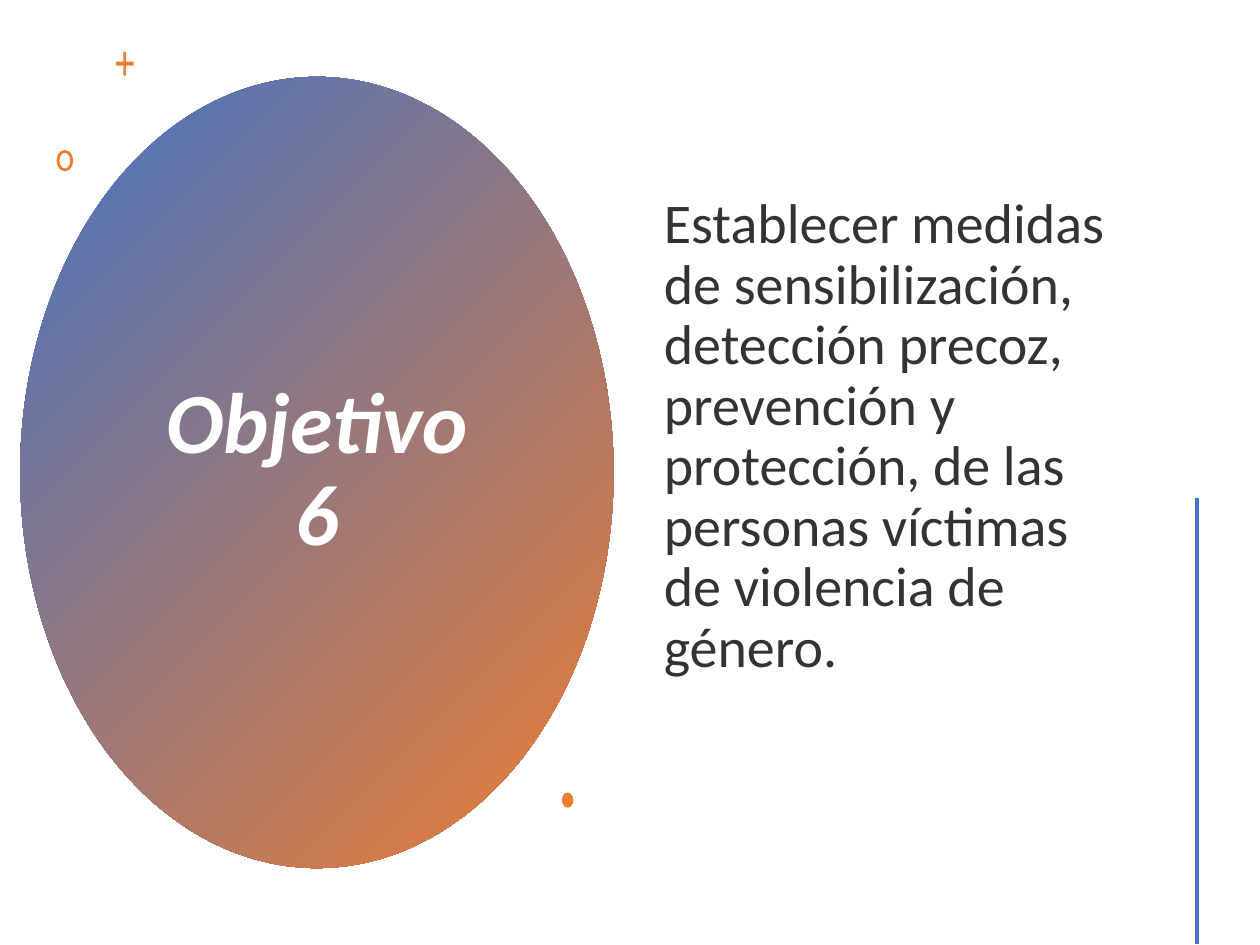
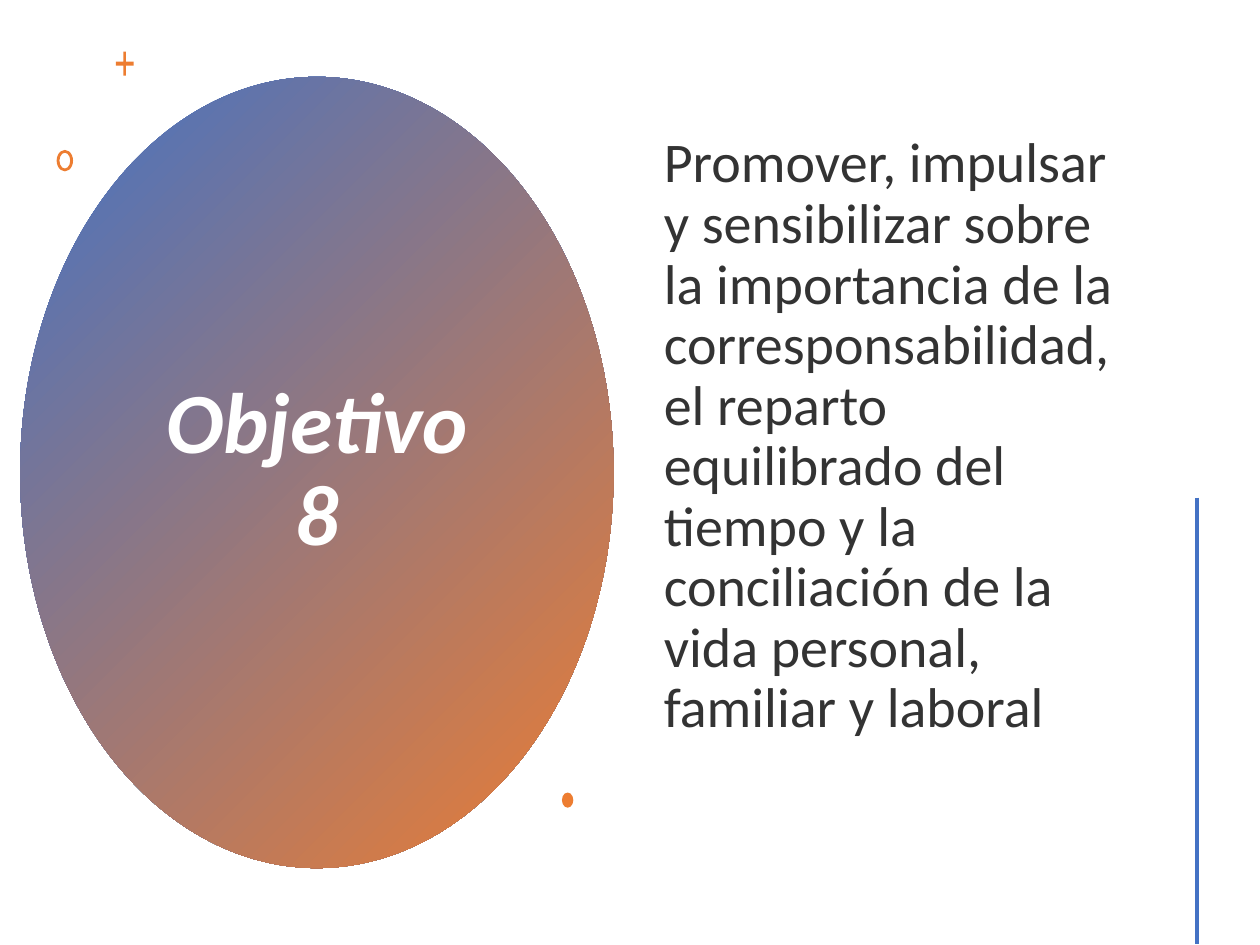
import pptx
import pptx.util
import pptx.dml.color
import pptx.enum.shapes
import pptx.enum.text
import pptx.oxml.ns
import lxml.etree

Inches = pptx.util.Inches
SHAPE = pptx.enum.shapes.MSO_SHAPE
ALIGN = pptx.enum.text.PP_ALIGN
COLORS = {"blue": "4472C4", "orange": "ED7D31", "white": "FFFFFF", "text": "333333"}
FONT = "Calibri"
OBJECTIVES = [
    ("Objetivo 6", "Establecer medidas de sensibilización, detección precoz, prevención y "
     "protección, de las personas víctimas de violencia de género."),
    ("Objetivo 8", "Promover, impulsar y sensibilizar sobre la importancia de la "
     "corresponsabilidad, el reparto equilibrado del tiempo y la conciliación de la "
     "vida personal, familiar y laboral"),
]


def rgb(name):
    """Return the named palette colour."""
    return pptx.dml.color.RGBColor.from_string(COLORS[name])


def add_text(s, text, box, size, color, align=ALIGN.LEFT, bold=False, italic=False,
             before=0, bottom=0.05):
    """Add a vertically centred text box."""
    tf = s.shapes.add_textbox(*map(Inches, box)).text_frame
    tf.word_wrap = True
    tf.vertical_anchor = pptx.enum.text.MSO_ANCHOR.MIDDLE
    tf.margin_bottom = Inches(bottom)
    p = tf.paragraphs[0]
    p.alignment, p.line_spacing = align, 0.9
    p.space_before = pptx.util.Pt(before)
    r = p.add_run()
    r.text = text
    r.font.name, r.font.size = FONT, pptx.util.Pt(size)
    r.font.bold, r.font.italic = bold, italic
    r.font.color.rgb = rgb(color)


def paint(sp, color):
    """Give a shape a plain fill without outline or shadow."""
    sp.shadow.inherit = False
    sp.fill.solid()
    sp.fill.fore_color.rgb = rgb(color)
    sp.line.fill.background()


def add_plus(s, box):
    """Draw a thin plus sign that fills the box."""
    left, top, width, height = box
    x0, x1, x2, x3 = (left + width * f for f in (0, 0.43, 0.57, 1))
    y0, y1, y2, y3 = (top + height * f for f in (0, 0.42, 0.58, 1))
    outline = [(x1, y0), (x2, y0), (x2, y1), (x3, y1), (x3, y2), (x2, y2),
               (x2, y3), (x1, y3), (x1, y2), (x0, y2), (x0, y1), (x1, y1)]
    points = [(Inches(x), Inches(y)) for x, y in outline]
    builder = s.shapes.build_freeform(*points[0])
    builder.add_line_segments(points[1:], close=True)
    paint(builder.convert_to_shape(), "orange")


def add_title_oval(s, title, box):
    """Draw the gradient oval with its title and the small ornaments around it."""
    left, top, width, height = box
    oval = s.shapes.add_shape(SHAPE.OVAL, *map(Inches, box))
    oval.shadow.inherit = False
    oval.line.fill.background()
    oval.fill.gradient()
    oval.fill.gradient_angle = 315
    for stop, color in zip(oval.fill.gradient_stops, ("blue", "orange")):
        stop.color.rgb = rgb(color)
    add_text(s, title, (left + 0.86, top + 0.8, width - 1.72, height - 1.61), 49, "white",
             align=ALIGN.CENTER, bold=True, italic=True)
    add_plus(s, (left + 0.76, top - 0.2, 0.14, 0.19))
    ring = s.shapes.add_shape(SHAPE.DONUT, Inches(left + 0.29), Inches(top + 0.58),
                              Inches(0.13), Inches(0.17))
    ring.adjustments[0] = 0.17
    paint(ring, "orange")
    dot = s.shapes.add_shape(SHAPE.OVAL, Inches(left + 4.3), Inches(top + 5.68),
                             Inches(0.09), Inches(0.12))
    paint(dot, "orange")


def add_description(s, text, box):
    """Write the objective and draw the rule to its right."""
    left, top, width, height = box
    add_text(s, text, box, 32, "text", before=7.5, bottom=0.63)
    x = Inches(left + width + 0.42)
    rule = s.shapes.add_connector(pptx.enum.shapes.MSO_CONNECTOR.STRAIGHT,
                                  x, Inches(top + 3.38), x, Inches(top + 6.92))
    rule.line.color.rgb = rgb("blue")
    rule.line.width = pptx.util.Pt(2)
    lxml.etree.SubElement(rule._element.spPr, pptx.oxml.ns.qn("a:effectLst"))


def add_objective_slide(prs, title, text):
    """Add one slide that presents an objective."""
    s = prs.slides.add_slide(prs.slide_layouts[6])
    s.background.fill.solid()
    s.background.fill.fore_color.rgb = rgb("white")
    add_title_oval(s, title, (0.16, 0.61, 4.71, 6.28))
    add_description(s, text, (5.17, 0.57, 3.91, 6.38))


def main():
    """Build and save the presentation."""
    prs = pptx.Presentation()
    prs.slide_width, prs.slide_height = Inches(10), Inches(7.5)
    for title, text in OBJECTIVES:
        add_objective_slide(prs, title, text)
    prs.save("out.pptx")


if __name__ == "__main__":
    main()
